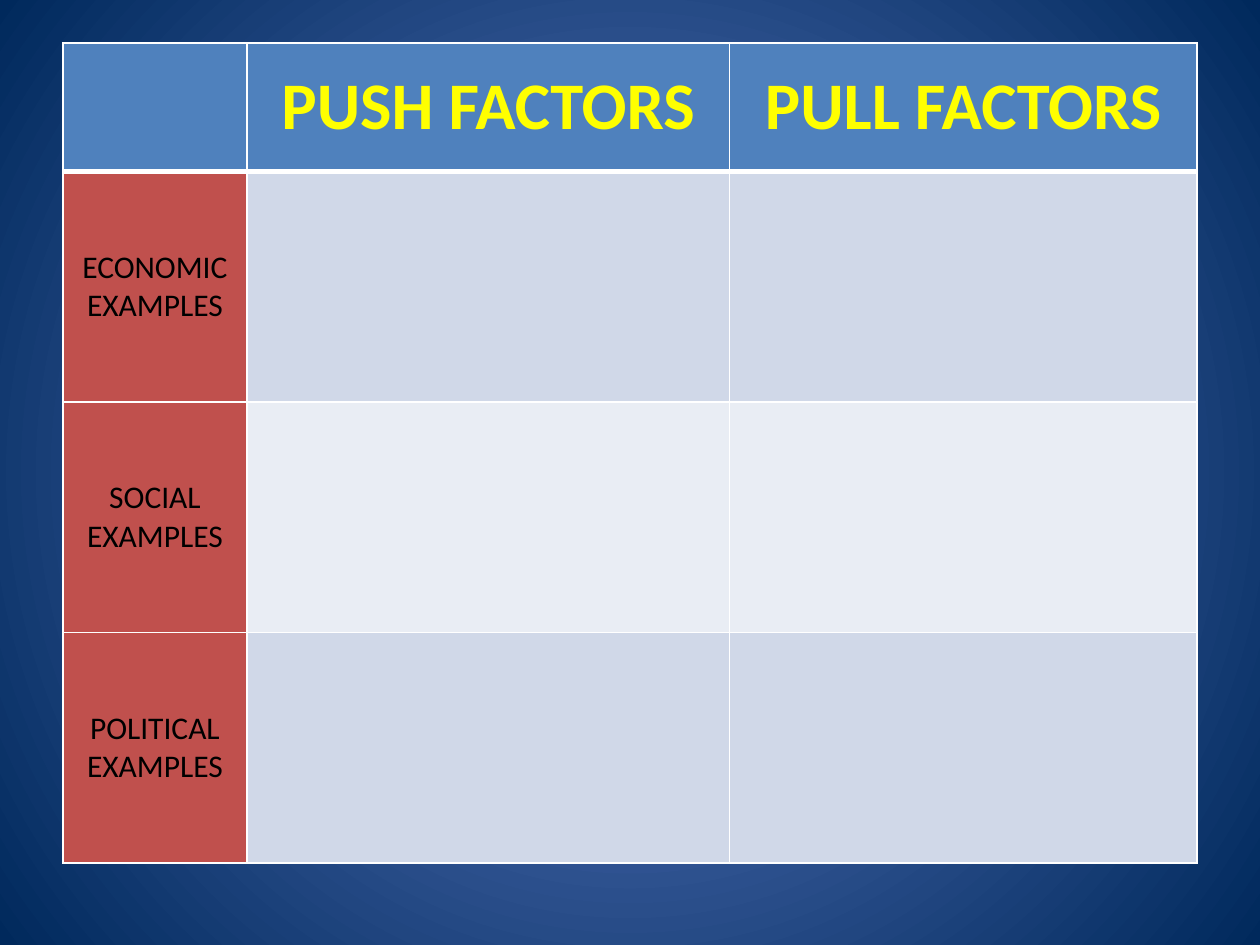
from lxml import etree
from pptx import Presentation
from pptx import util as u
from pptx.dml.color import RGBColor
from pptx.enum import text
from pptx.oxml.ns import qn

# Content
HEADERS = ["", "PUSH FACTORS", "PULL FACTORS"]
TOPICS = ["ECONOMIC", "SOCIAL", "POLITICAL"]
ROWS = [HEADERS] + [[f"{topic}\nEXAMPLES", "", ""] for topic in TOPICS]

# Layout and colours
LEFT, TOP = 0.5, 0.34
COLUMN_WIDTHS = [1.46, 3.83, 3.71]
ROW_HEIGHTS = [1.02] + [1.83] * len(TOPICS)
HEADER_FILL, TOPIC_FILL = "4F81BD", "C0504D"
BAND_FILLS = ["D0D8E8", "E9EDF4"]
BACKGROUND = ["5E7CC5", "00295C"]
BORDER = "FFFFFF"


def color(value):
    return RGBColor.from_string(value)


def write_text(frame, content, size=18, fill="000000", bold=False):
    for index, line in enumerate(content.split("\n")):
        paragraph = frame.paragraphs[0] if index == 0 else frame.add_paragraph()
        paragraph.alignment = text.PP_ALIGN.CENTER
        run = paragraph.add_run()
        run.text = line
        run.font.name = "Calibri"
        run.font.size = u.Pt(size)
        run.font.bold = bold
        run.font.color.rgb = color(fill)


def set_borders(cell, **widths):
    properties = cell._tc.get_or_add_tcPr()
    for side in "LRTB":
        line = etree.SubElement(properties, qn(f"a:ln{side}"),
                                w=str(u.Pt(widths.get(side, 1))))
        solid = etree.SubElement(line, qn("a:solidFill"))
        etree.SubElement(solid, qn("a:srgbClr"), val=BORDER)


def set_radial_background(slide, colors):
    fill = slide.background.fill
    fill.gradient()
    for stop, value in zip(fill.gradient_stops, colors):
        stop.color.rgb = color(value)
    gradient = slide.element.find(".//" + qn("a:gradFill"))
    gradient.remove(gradient.find(qn("a:lin")))
    radial = etree.SubElement(gradient, qn("a:path"), {"path": "circle"})
    etree.SubElement(radial, qn("a:fillToRect"),
                     {side: "50000" for side in "ltrb"})


def main():
    presentation = Presentation()
    presentation.slide_width = u.Inches(10)
    presentation.slide_height = u.Inches(7.5)
    slide = presentation.slides.add_slide(presentation.slide_layouts[6])
    set_radial_background(slide, BACKGROUND)

    # Table grid
    table = slide.shapes.add_table(
        len(ROWS), len(HEADERS), u.Inches(LEFT), u.Inches(TOP),
        u.Inches(sum(COLUMN_WIDTHS)), u.Inches(sum(ROW_HEIGHTS))).table
    for column, width in zip(table.columns, COLUMN_WIDTHS):
        column.width = u.Inches(width)
    for row, height in zip(table.rows, ROW_HEIGHTS):
        row.height = u.Inches(height)

    # Cells, with a thick rule under the header
    for row_index, row in enumerate(ROWS):
        for column_index, content in enumerate(row):
            cell = table.cell(row_index, column_index)
            cell.vertical_anchor = text.MSO_ANCHOR.MIDDLE
            if row_index == 0:
                fill, style = HEADER_FILL, dict(size=38, fill="FFFF00", bold=True)
                set_borders(cell, B=3)
            else:
                band = BAND_FILLS[(row_index - 1) % 2]
                fill, style = (band if column_index else TOPIC_FILL), {}
                set_borders(cell, T=3 if row_index == 1 else 1)
            cell.fill.solid()
            cell.fill.fore_color.rgb = color(fill)
            if content:
                write_text(cell.text_frame, content, **style)

    presentation.save("out.pptx")


if __name__ == "__main__":
    main()
